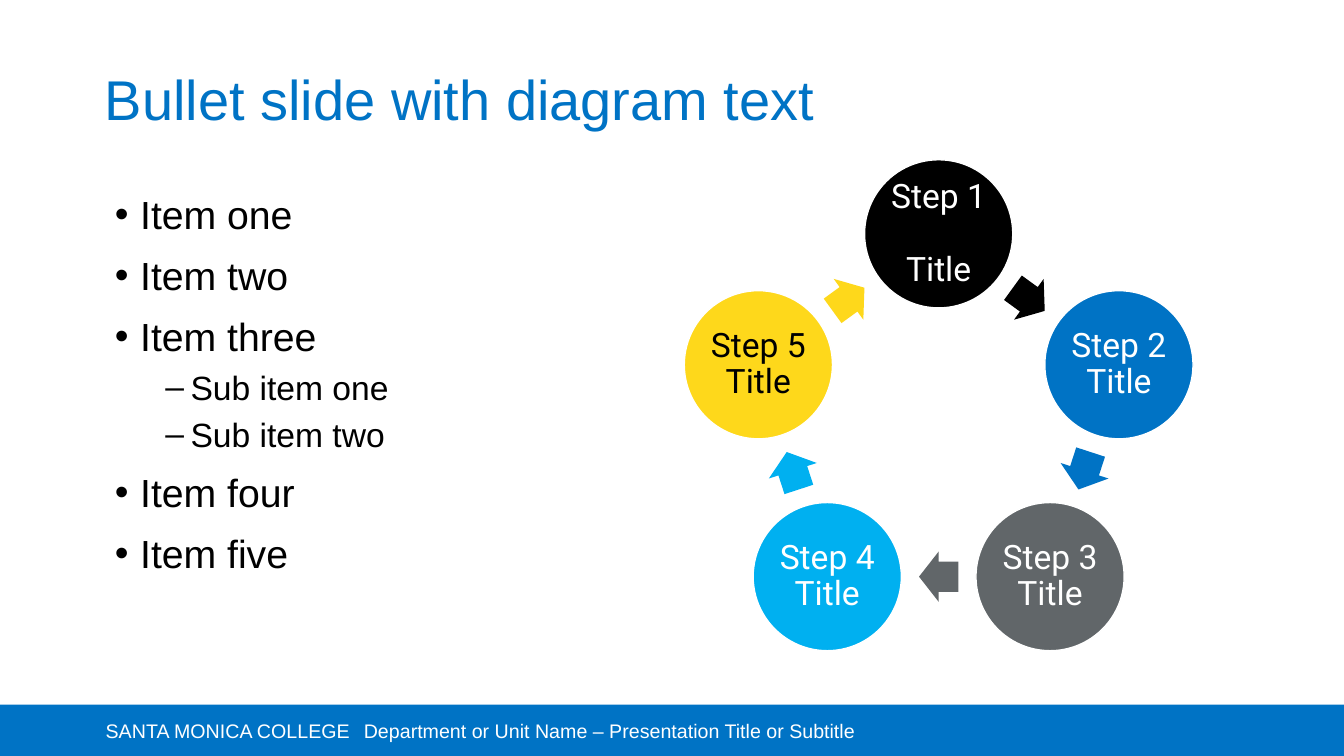
from math import cos, radians, sin

from lxml import etree
from pptx import Presentation, util as u
from pptx.dml.color import RGBColor
from pptx.enum import shapes, text
from pptx.oxml.ns import qn

WIDE, HIGH = 13.33, 7.5
BLUE, WHITE, BLACK = "0073C5", "FFFFFF", "000000"
MID_X, MID_Y, RING = 9.31, 4.2, 1.88
DISC, LONG, BROAD = 1.47, 0.39, 0.5
STEPS = [("Step 1 \vTitle", BLACK, WHITE), ("Step 2\vTitle", BLUE, WHITE),
         ("Step 3\vTitle", "616669", WHITE), ("Step 4\vTitle", "00B0F0", WHITE),
         ("Step 5\vTitle", "FED81B", BLACK)]
ITEMS = [("Item one", 0), ("Item two", 0), ("Item three", 0), ("Sub item one", 1),
         ("Sub item two", 1), ("Item four", 0), ("Item five", 0)]
LEVELS = [(28, 10, 0.25, "•"), (24, 5, 0.75, "–")]  # size, space before, indent, bullet

deck = Presentation()
deck.slide_width, deck.slide_height = u.Inches(WIDE), u.Inches(HIGH)
slide = deck.slides.add_slide(deck.slide_layouts[1])


def style(para, size, color, face="Arial"):
    """Format the runs of a paragraph, and its line breaks to the same height."""
    for run in para.runs:
        run.font.size = u.Pt(size)
        run.font.name = face
        run.font.color.rgb = RGBColor.from_string(color)
    for gap in para._p.findall(qn("a:br")):
        props = etree.SubElement(gap, qn("a:rPr"), sz=str(size * 100))
        etree.SubElement(props, qn("a:latin"), typeface=face)


def draw(kind, mid_x, mid_y, wide, high, color):
    """Add a filled preset shape centred on a point."""
    shape = slide.shapes.add_shape(kind, u.Inches(mid_x - wide / 2), u.Inches(mid_y - high / 2),
                                   u.Inches(wide), u.Inches(high))
    shape.shadow.inherit = False
    shape.fill.solid()
    shape.fill.fore_color.rgb = RGBColor.from_string(color)
    shape.line.fill.background()
    return shape


# Title
title = slide.shapes.title
title.left, title.top, title.width, title.height = map(u.Inches, (1.04, 0.54, 11.25, 0.95))
frame = title.text_frame
frame.text = "Bullet slide with diagram text"
frame.margin_left = frame.margin_right = frame.margin_top = frame.margin_bottom = 0
frame.vertical_anchor = text.MSO_ANCHOR.MIDDLE
frame.auto_size = text.MSO_AUTO_SIZE.NONE
head = frame.paragraphs[0]
head.alignment = text.PP_ALIGN.LEFT
head.line_spacing = 0.9
style(head, 40, BLUE)

# Bullet list
body = slide.placeholders[1]
body.left, body.top, body.width, body.height = map(u.Inches, (1.04, 1.84, 5.75, 4.66))
frame = body.text_frame
frame.text = "\n".join(label for label, _ in ITEMS)
frame.auto_size = text.MSO_AUTO_SIZE.NONE
for i, (para, (_, level)) in enumerate(zip(frame.paragraphs, ITEMS)):
    size, gap, indent, mark = LEVELS[level]
    props = para._p.get_or_add_pPr()
    props.set("marL", str(u.Inches(indent)))
    props.set("indent", str(u.Inches(-0.25)))
    etree.SubElement(props, qn("a:buChar")).set("char", mark)
    para.level = level
    para.space_before = u.Pt(gap if i else 0)
    style(para, size, BLACK)

# Ring of steps, each followed by an arrow to the next
turn = 360 / len(STEPS)
reach = RING * cos(radians(turn / 2))
for i, (label, color, ink) in enumerate(STEPS):
    angle = radians(i * turn)
    disc = draw(shapes.MSO_SHAPE.OVAL, MID_X + RING * sin(angle), MID_Y - RING * cos(angle),
                DISC, DISC, color)
    disc.line.color.rgb = RGBColor.from_string(WHITE)
    disc.line.width = u.Pt(1)
    frame = disc.text_frame
    frame.word_wrap = True
    frame.margin_left = frame.margin_right = frame.margin_top = frame.margin_bottom = u.Inches(0.03)
    frame.vertical_anchor = text.MSO_ANCHOR.MIDDLE
    frame.text = label
    para = frame.paragraphs[0]
    para.alignment = text.PP_ALIGN.CENTER
    para.line_spacing = 0.9
    style(para, 24, ink, "Roboto")

    half = (i + 0.5) * turn
    angle = radians(half)
    arrow = draw(shapes.MSO_SHAPE.RIGHT_ARROW, MID_X + reach * sin(angle),
                 MID_Y - reach * cos(angle), LONG, BROAD, color)
    arrow.rotation = half
    arrow.adjustments[0], arrow.adjustments[1] = 0.6, 0.5

# Footer
draw(shapes.MSO_SHAPE.RECTANGLE, WIDE / 2, 7.245, WIDE, 0.51, BLUE)
for left, wide, label in [(0.95, 9.04, "SANTA MONICA COLLEGE"),
                          (3.51, 6.48, "Department or Unit Name – Presentation Title or Subtitle")]:
    box = slide.shapes.add_textbox(*map(u.Inches, (left, 7, wide, 0.5)))
    frame = box.text_frame
    frame.word_wrap = True
    frame.vertical_anchor = text.MSO_ANCHOR.MIDDLE
    frame.text = label
    style(frame.paragraphs[0], 14, WHITE)

deck.save("out.pptx")
